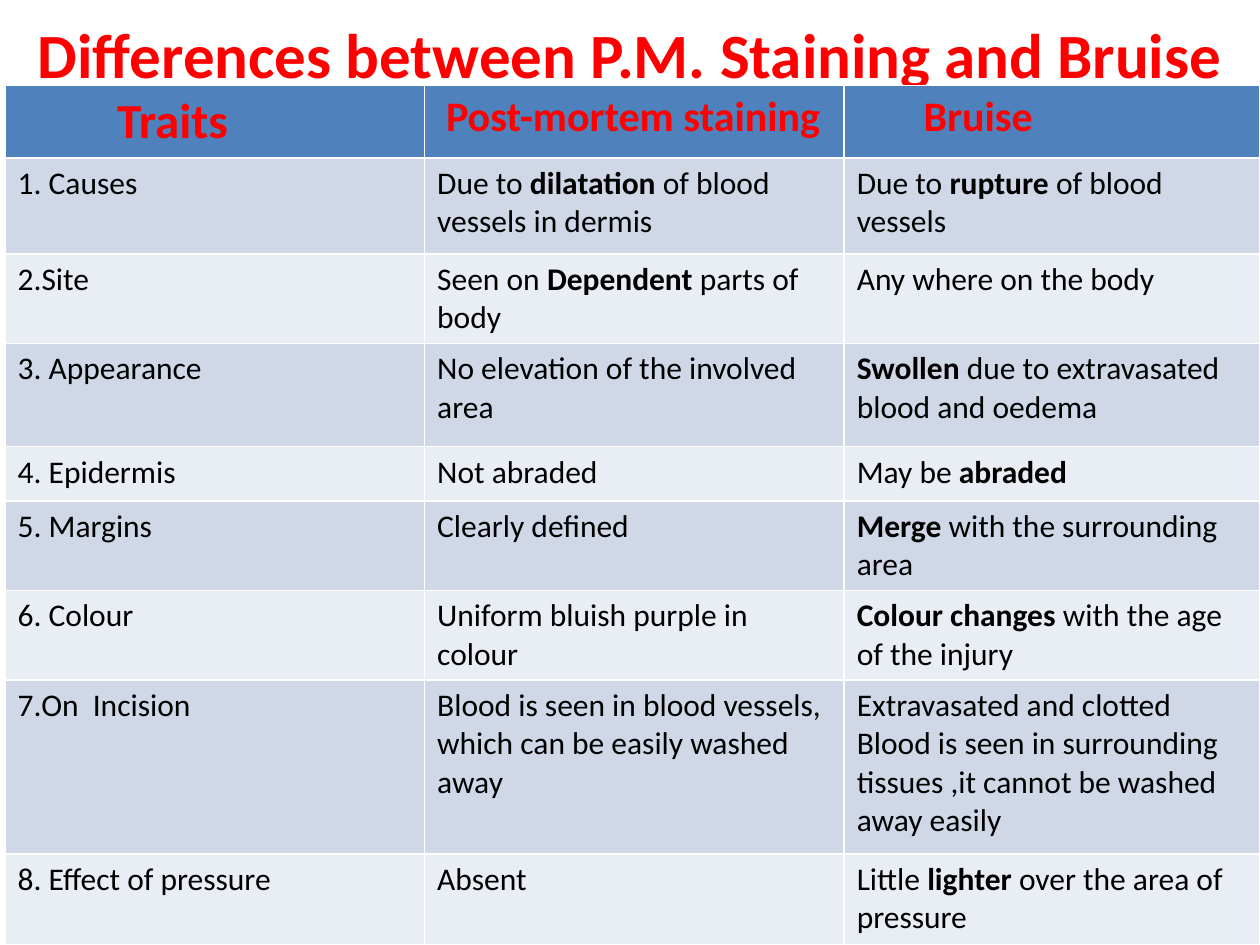
from pptx import Presentation
from pptx.dml.color import RGBColor
from pptx.enum.text import MSO_ANCHOR, PP_ALIGN
from pptx.util import Inches, Pt

MIDDLE = MSO_ANCHOR.MIDDLE
CENTER = PP_ALIGN.CENTER
FONT = "Calibri"
RED, BLACK = "FF0000", "000000"
HEAD, BANDS = "4F81BD", ("D0D8E8", "E9EDF4")


def color(code):
    return RGBColor.from_string(code)


def style(run, size, code, bold):
    run.font.name = FONT
    run.font.size = Pt(size)
    run.font.bold = bold
    run.font.color.rgb = color(code)


prs = Presentation()
prs.slide_width, prs.slide_height = Inches(10), Inches(7.5)
slide = prs.slides.add_slide(prs.slide_layouts[5])

# Title
title = slide.shapes.title
title.left, title.top = Inches(0), Inches(0)
title.width, title.height = Inches(10), Inches(0.84)
frame = title.text_frame
frame.text = "Differences between P.M. Staining and Bruise"
frame.vertical_anchor = MIDDLE
frame.paragraphs[0].alignment = CENTER
style(frame.paragraphs[0].runs[0], 36, RED, True)

# Column heads: text, size, left margin
heads = [("Traits", 28, 0.89), ("Post-mortem staining", 24, 0.17), ("Bruise", 24, 0.63)]

# Body rows: height, then cells; asterisks enclose bold words
rows = [
    (0.76, "1. Causes", "Due to *dilatation* of blood vessels in dermis",
     "Due to *rupture* of blood vessels"),
    (0.71, "2.Site", "Seen on *Dependent* parts of body", "Any where on the body"),
    (0.82, "3. Appearance", "No elevation of the involved area",
     "*Swollen* due to extravasated blood and oedema"),
    (0.43, "4. Epidermis", "Not abraded", "May be *abraded*"),
    (0.71, "5. Margins", "Clearly defined", "*Merge* with the surrounding area"),
    (0.71, "6. Colour", "Uniform bluish purple in colour",
     "*Colour changes *with the age of the injury"),
    (1.38, "7.On  Incision",
     "Blood is seen in blood vessels, which can be easily washed away",
     "Extravasated and clotted Blood is seen in surrounding tissues ,"
     "it cannot be washed away easily"),
    (0.72, "8. Effect of pressure", "Absent",
     "Little *lighter* over the area of pressure"),
]

# Table, with white rules from its default style
table = slide.shapes.add_table(len(rows) + 1, len(heads), Inches(0.04), Inches(0.68),
                               Inches(9.96), Inches(6.82)).table
for col, width in zip(table.columns, (3.33, 3.33, 3.3)):
    col.width = Inches(width)

# Header row
table.rows[0].height = Inches(0.57)
for c, (text, size, left) in enumerate(heads):
    cell = table.cell(0, c)
    cell.text_frame.text = text
    cell.margin_left = Inches(left)
    cell.fill.solid()
    cell.fill.fore_color.rgb = color(HEAD)
    style(cell.text_frame.paragraphs[0].runs[0], size, RED, True)

# Body rows
for r, (height, *texts) in enumerate(rows, 1):
    table.rows[r].height = Inches(height)
    for c, text in enumerate(texts):
        cell = table.cell(r, c)
        cell.fill.solid()
        cell.fill.fore_color.rgb = color(BANDS[(r - 1) % 2])
        para = cell.text_frame.paragraphs[0]
        for i, part in enumerate(text.split("*")):
            if part:
                run = para.add_run()
                run.text = part
                style(run, 18, BLACK, i % 2 == 1)

prs.save("out.pptx")
